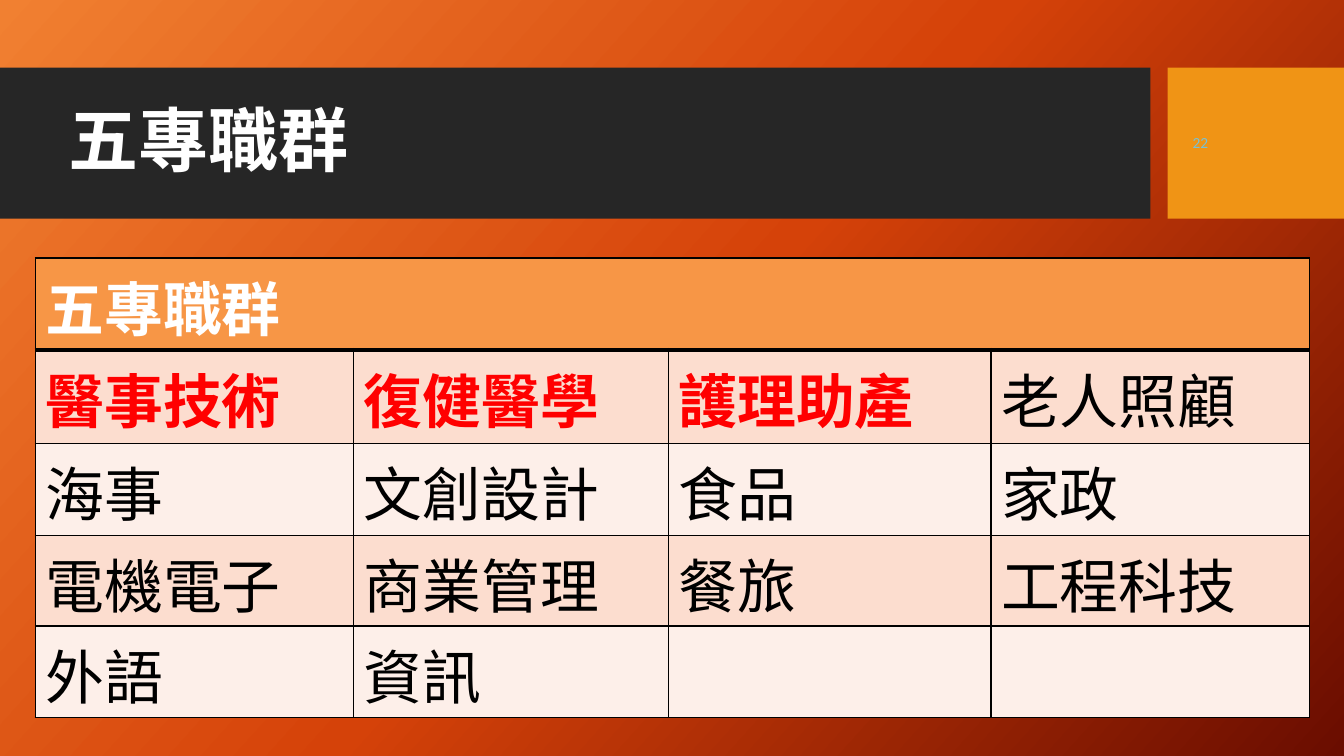
from copy import deepcopy

from lxml import etree
from pptx import Presentation
from pptx.dml.color import RGBColor
from pptx.enum.shapes import MSO_SHAPE
from pptx.enum.text import MSO_ANCHOR
from pptx.oxml.ns import qn
from pptx.util import Inches, Pt

RECT = MSO_SHAPE.RECTANGLE
MIDDLE = MSO_ANCHOR.MIDDLE
CJK = "Noto Sans CJK SC"

# Content
TITLE = "五專職群"
PAGE = "22"
GROUPS = [
    ["醫事技術", "復健醫學", "護理助產", "老人照顧"],
    ["海事", "文創設計", "食品", "家政"],
    ["電機電子", "商業管理", "餐旅", "工程科技"],
    ["外語", "資訊", "", ""],
]
HIGHLIGHTED = {"醫事技術", "復健醫學", "護理助產"}
COLS = [3.16, 3.12, 3.2, 3.16]
ROWS = [0.91, 0.93, 0.91, 0.9, 0.91]
BANDS = ["FCDDCF", "FDEFE9"]
GRADIENT = [(0, "F18031"), (0.5, "D54209"), (1, "6A0D00")]
BARS = [(0, 11.41, "262626"), (11.58, 1.75, "F09415")]


def rgb(value):
    return RGBColor.from_string(value)


def write(tf, text, size, color, font=CJK, bold=False, spacing=None):
    p = tf.paragraphs[0]
    if spacing:
        p.line_spacing = spacing
    r = p.add_run()
    r.text = text
    f = r.font
    f.name, f.size, f.bold = font, Pt(size), bold
    f.color.rgb = rgb(color)
    ea = etree.SubElement(r._r.get_or_add_rPr(), qn("a:ea"))
    ea.set("typeface", font)


def add_text(left, top, width, height, text, **fmt):
    box = slide.shapes.add_textbox(*map(Inches, (left, top, width, height)))
    tf = box.text_frame
    tf.word_wrap = True
    tf.vertical_anchor = MIDDLE
    write(tf, text, **fmt)


def style_cell(cell, fill, top=1, bottom=1):
    cell.fill.solid()
    cell.fill.fore_color.rgb = rgb(fill)
    tcPr = cell._tc.get_or_add_tcPr()
    sides = [("a:lnL", 1), ("a:lnR", 1), ("a:lnT", top), ("a:lnB", bottom)]
    for i, (tag, width) in enumerate(sides):
        ln = etree.Element(qn(tag), w=str(Pt(width)))
        solid = etree.SubElement(ln, qn("a:solidFill"))
        etree.SubElement(solid, qn("a:srgbClr"), val="000000")
        tcPr.insert(i, ln)


prs = Presentation()
prs.slide_width, prs.slide_height = Inches(13.33), Inches(7.5)
slide = prs.slides.add_slide(prs.slide_layouts[6])

# Background gradient
fill = slide.background.fill
fill.gradient()
fill.gradient_angle = 360 - 42
stop_list = slide._element.find(".//" + qn("a:gsLst"))
stop_list.append(deepcopy(stop_list[0]))
for stop, (position, color) in zip(fill.gradient_stops, GRADIENT):
    stop.position = position
    stop.color.rgb = rgb(color)

# Header bars, title and page number
for left, width, color in BARS:
    sp = slide.shapes.add_shape(RECT, Inches(left), Inches(0.67), Inches(width), Inches(1.5))
    sp.shadow.inherit = False
    sp.fill.solid()
    sp.fill.fore_color.rgb = rgb(color)
    sp.line.fill.background()
add_text(0.58, 0.91, 7.56, 1.03, TITLE, size=50, color="FFFFFF", bold=True, spacing=0.9)
add_text(11.73, 0.82, 1.26, 1.19, PAGE, size=11, color="79C1D5", font="Calibri")

# Table of groups
table = slide.shapes.add_table(
    len(ROWS), len(COLS), Inches(0.35), Inches(2.56), Inches(sum(COLS)), Inches(sum(ROWS))
).table
table.first_row = table.horz_banding = False
for col, width in zip(table.columns, COLS):
    col.width = Inches(width)
for row, height in zip(table.rows, ROWS):
    row.height = Inches(height)

header = table.cell(0, 0)
header.merge(table.cell(0, len(COLS) - 1))
write(header.text_frame, TITLE, size=42, color="FFFFFF", bold=True)
for c in range(len(COLS)):
    style_cell(table.cell(0, c), "F79646", bottom=3)

for i, names in enumerate(GROUPS):
    for c, name in enumerate(names):
        cell = table.cell(i + 1, c)
        style_cell(cell, BANDS[i % 2], top=1 if i else 3)
        if name:
            hot = name in HIGHLIGHTED
            write(cell.text_frame, name, size=42, color="FF0000" if hot else "000000", bold=hot)

prs.save("out.pptx")
